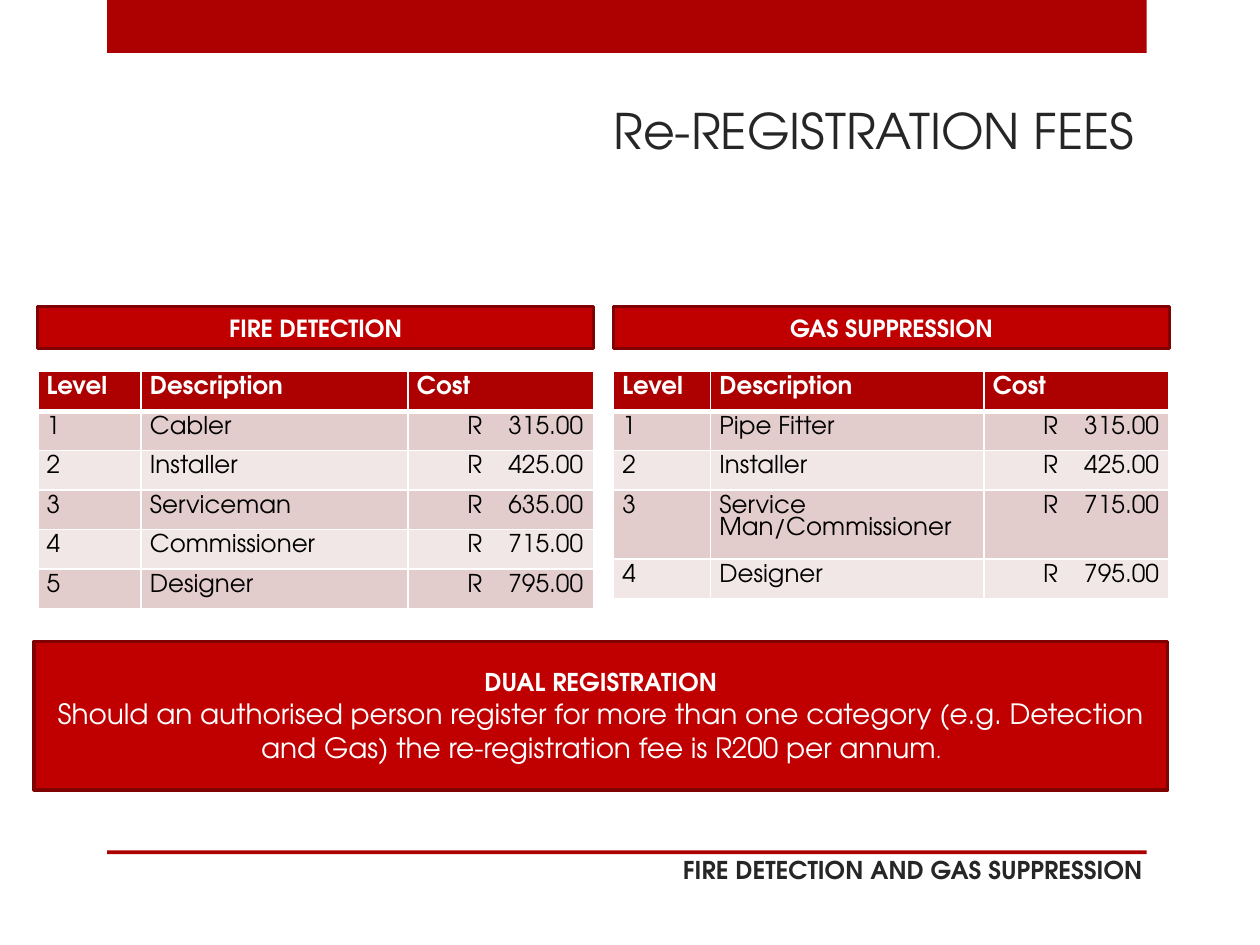
from dataclasses import dataclass

from lxml.etree import SubElement
from pptx import Presentation
from pptx.dml.color import RGBColor
from pptx.enum.shapes import MSO_SHAPE
from pptx.enum.text import MSO_ANCHOR, PP_ALIGN
from pptx.oxml.ns import qn
from pptx.util import Inches, Pt

FONT = "TeX Gyre Adventor"
WHITE, BLACK, DARK = "FFFFFF", "000000", "262626"
THEME_RED, BOX_RED, EDGE_RED = "AD0101", "C00000", "800101"
BANDS = ("E3CCCC", "F1E7E7")
ROW_HEIGHT, PANEL_WIDTH, COST_WIDTH = 0.3, 4.41, 1.47
MARGIN_X, MARGIN_Y, COST_INDENT = 0.07, 0.04, 0.47


@dataclass
class FeePanel:
    heading: str
    left: float
    level_width: float
    fees: list[tuple[str, str]]


PANELS = [
    FeePanel("FIRE DETECTION", 0.3, 0.82, [
        ("Cabler", "315.00"), ("Installer", "425.00"), ("Serviceman", "635.00"),
        ("Commissioner", "715.00"), ("Designer", "795.00")]),
    FeePanel("GAS SUPPRESSION", 4.87, 0.77, [
        ("Pipe Fitter", "315.00"), ("Installer", "425.00"),
        ("Service Man/Commissioner", "715.00"), ("Designer", "795.00")]),
]


def rgb(color: str) -> RGBColor:
    return RGBColor.from_string(color)


def add_run(p, text: str, size: float, color: str, bold: bool = False, font: str = FONT) -> None:
    r = p.add_run()
    r.text = text
    r.font.name, r.font.size, r.font.bold = font, Pt(size), bold
    r.font.color.rgb = rgb(color)


def add_text(s, left: float, top: float, width: float, height: float,
             text: str, size: float, bold: bool = False) -> None:
    box = s.shapes.add_textbox(Inches(left), Inches(top), Inches(width), Inches(height))
    box.text_frame.word_wrap = True
    p = box.text_frame.paragraphs[0]
    p.alignment = PP_ALIGN.RIGHT
    add_run(p, text, size, DARK, bold)


def add_rect(s, left: float, top: float, width: float, height: float,
             fill: str, edge: str | None = None):
    sp = s.shapes.add_shape(MSO_SHAPE.RECTANGLE, Inches(left), Inches(top),
                            Inches(width), Inches(height))
    sp.shadow.inherit = False
    sp.fill.solid()
    sp.fill.fore_color.rgb = rgb(fill)
    if edge:
        sp.line.color.rgb = rgb(edge)
        sp.line.width = Pt(1.75)
    else:
        sp.line.fill.background()
    tf = sp.text_frame
    tf.word_wrap = True
    tf.vertical_anchor = MSO_ANCHOR.MIDDLE
    p = tf.paragraphs[0]
    p.alignment = PP_ALIGN.CENTER
    return p


def set_borders(cell, top: float, bottom: float) -> None:
    tc_pr = cell._tc.get_or_add_tcPr()
    for side, width in {"L": 1, "R": 1, "T": top, "B": bottom}.items():
        line = SubElement(tc_pr, qn(f"a:ln{side}"), w=str(Pt(width)))
        SubElement(SubElement(line, qn("a:solidFill")), qn("a:srgbClr"), val=WHITE)


def add_right_tab(p, position: float) -> None:
    tabs = SubElement(p._p.get_or_add_pPr(), qn("a:tabLst"))
    SubElement(tabs, qn("a:tab"), pos=str(Inches(position)), algn="r")


def fill_cell(cell, text: str, row: int) -> None:
    header = row == 0
    set_borders(cell, 3 if row == 1 else 1, 3 if header else 1)
    cell.fill.solid()
    cell.fill.fore_color.rgb = rgb(THEME_RED if header else BANDS[(row - 1) % 2])
    cell.margin_left = cell.margin_right = Inches(MARGIN_X)
    cell.margin_top = cell.margin_bottom = Inches(MARGIN_Y)
    p = cell.text_frame.paragraphs[0]
    if "\t" in text:
        cell.margin_left = Inches(COST_INDENT)
        add_right_tab(p, COST_WIDTH - COST_INDENT - MARGIN_X - 0.01)
    add_run(p, text, 14, WHITE if header else BLACK, header)


def add_panel(s, panel: FeePanel) -> None:
    rows = [("Level", "Description", "Cost")]
    rows += [(str(level), name, f"R\t{cost}")
             for level, (name, cost) in enumerate(panel.fees, 1)]
    frame = s.shapes.add_table(len(rows), 3, Inches(panel.left), Inches(2.95),
                               Inches(PANEL_WIDTH), Inches(ROW_HEIGHT * len(rows)))
    table = frame.table
    widths = (panel.level_width, PANEL_WIDTH - panel.level_width - COST_WIDTH, COST_WIDTH)
    for column, width in zip(table.columns, widths):
        column.width = Inches(width)
    for i, values in enumerate(rows):
        table.rows[i].height = Inches(ROW_HEIGHT)
        for j, text in enumerate(values):
            fill_cell(table.cell(i, j), text, i)
    p = add_rect(s, panel.left, 2.43, PANEL_WIDTH, 0.34, BOX_RED, EDGE_RED)
    add_run(p, panel.heading, 13.5, WHITE, True)


def main() -> None:
    """Build the re-registration fees slide."""
    prs = Presentation()
    prs.slide_width, prs.slide_height = Inches(10), Inches(7.5)
    s = prs.slides.add_slide(prs.slide_layouts[6])
    add_rect(s, 0.85, 0, 8.25, 0.42, THEME_RED)
    add_rect(s, 0.85, 6.75, 8.25, 0.03, THEME_RED)
    add_text(s, 0.67, 6.74, 8.5, 0.4, "FIRE DETECTION AND GAS SUPPRESSION", 14, True)
    add_text(s, 0.83, 0.75, 8.27, 0.9, "Re-REGISTRATION FEES", 28)
    for panel in PANELS:
        add_panel(s, panel)
    p = add_rect(s, 0.27, 5.09, 9, 1.18, BOX_RED, EDGE_RED)
    add_run(p, "DUAL REGISTRATION", 14, WHITE, True)
    p.add_line_break()
    add_run(p, "Should an authorised person register for more than one category "
               "(e.g. Detection and Gas) the re-registration fee is R200 per annum", 16, WHITE)
    add_run(p, ".", 16, WHITE, font="Comic Neue")
    prs.save("out.pptx")


if __name__ == "__main__":
    main()
